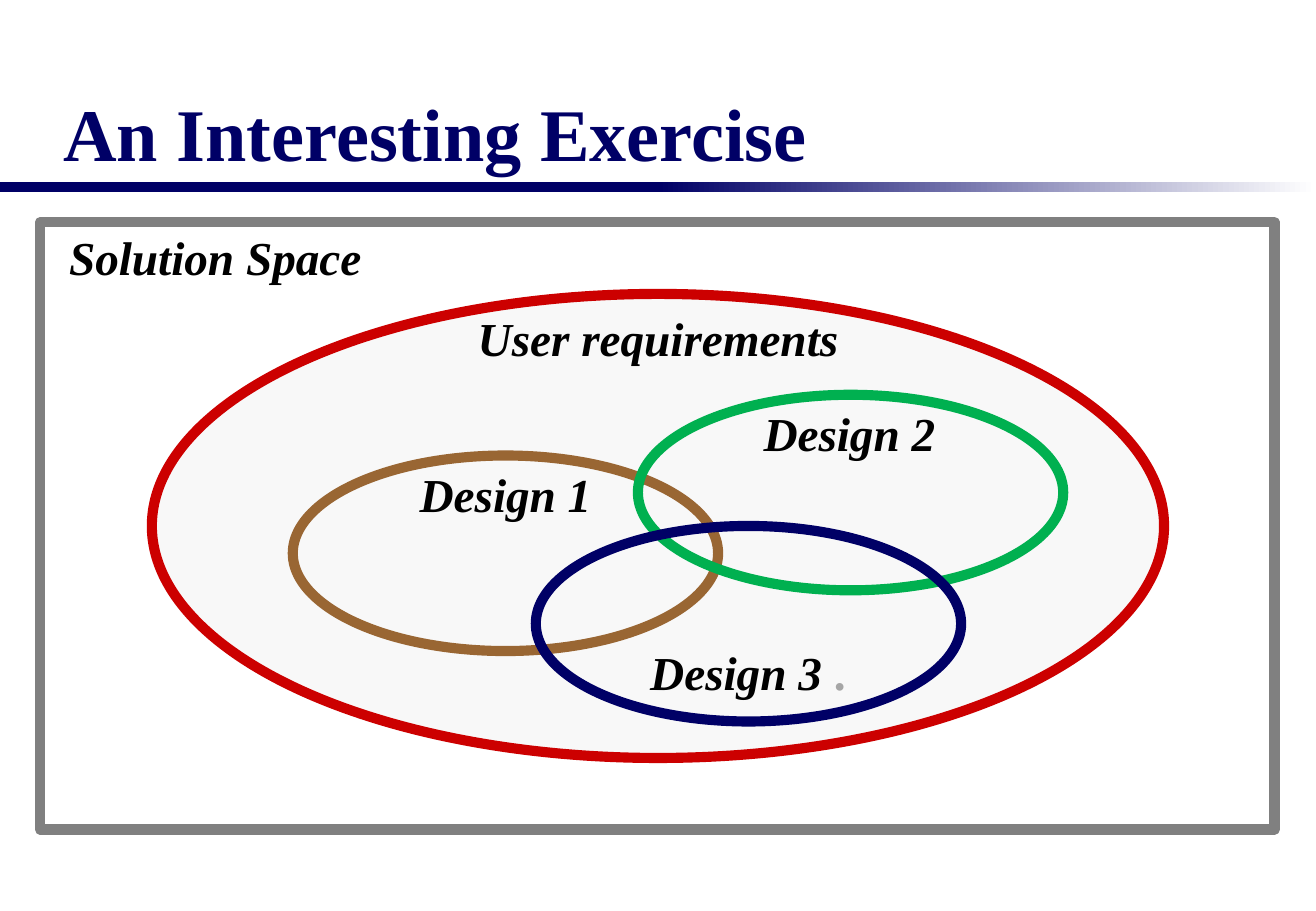
import pptx
import pptx.util
import pptx.dml.color
import pptx.enum.shapes
import pptx.enum.text

Inches = pptx.util.Inches
SHAPES = pptx.enum.shapes.MSO_SHAPE
ALIGN = pptx.enum.text.PP_ALIGN
ANCHOR = pptx.enum.text.MSO_ANCHOR
NAVY = "000066"
LABEL_FORMAT = {"name": "Times New Roman", "size": pptx.util.Pt(28), "bold": True, "italic": True}
TITLE_FORMAT = {"name": "Times New Roman", "size": pptx.util.Pt(44), "bold": True, "italic": False}


def add_run(paragraph, text, font_format, color):
    run = paragraph.add_run()
    run.text = text
    for attribute, value in font_format.items():
        setattr(run.font, attribute, value)
    run.font.color.rgb = pptx.dml.color.RGBColor.from_string(color)


def add_outline(slide, kind, box, fill=None, line=None):
    shape = slide.shapes.add_shape(kind, *[Inches(length) for length in box])
    shape.shadow.inherit = False
    if fill:
        shape.fill.solid()
        shape.fill.fore_color.rgb = pptx.dml.color.RGBColor.from_string(fill)
    else:
        shape.fill.background()
    if line:
        shape.line.color.rgb = pptx.dml.color.RGBColor.from_string(line)
        shape.line.width = pptx.util.Pt(6)
    else:
        shape.line.fill.background()
    return shape


presentation = pptx.Presentation()
presentation.slide_width = Inches(10.83)
presentation.slide_height = Inches(7.5)
slide = presentation.slides.add_slide(presentation.slide_layouts[5])

# Title
title = slide.shapes.title
title.left, title.top, title.width, title.height = [Inches(length) for length in (0.42, 0.29, 10, 1.21)]
title.text_frame.auto_size = pptx.enum.text.MSO_AUTO_SIZE.NONE
title.text_frame.vertical_anchor = ANCHOR.BOTTOM
title_paragraph = title.text_frame.paragraphs[0]
title_paragraph.alignment = ALIGN.LEFT
add_run(title_paragraph, "An Interesting Exercise", TITLE_FORMAT, NAVY)

# Rule under the title: solid half, then fading half
add_outline(slide, SHAPES.RECTANGLE, (0, 1.5, 5.42, 0.08), fill=NAVY)
fading_bar = add_outline(slide, SHAPES.RECTANGLE, (5.41, 1.5, 5.42, 0.08))
fading_bar.fill.gradient()
fading_bar.fill.gradient_angle = 0
for stop, color in zip(fading_bar.fill.gradient_stops, (NAVY, "FFFFFF")):
    stop.color.rgb = pptx.dml.color.RGBColor.from_string(color)

# Solution space frame
frame = add_outline(slide, SHAPES.RECTANGLE, (0.33, 1.83, 10.16, 5), line="808080")
frame.text_frame.vertical_anchor = ANCHOR.TOP
frame_paragraph = frame.text_frame.paragraphs[0]
frame_paragraph.alignment = ALIGN.LEFT
frame_properties = frame_paragraph._p.get_or_add_pPr()
frame_properties.set("marL", str(Inches(0.44)))
frame_properties.set("indent", str(Inches(-0.3)))
add_run(frame_paragraph, "Solution Space", LABEL_FORMAT, "000000")

# Requirements and the designs inside them: label, ellipse, fill, line, label box
DESIGN_SIZE = (3.5, 1.61)
ellipses = [
    ("User requirements", (1.25, 2.42, 8.33, 3.82), "F8F8F8", "CC0000", (3.83, 2.5, 3.17, 0.57)),
    ("Design 1", (2.41, 3.75, *DESIGN_SIZE), None, "996633", (3.35, 3.78, 1.62, 0.57)),
    ("Design 2", (5.25, 3.25, *DESIGN_SIZE), None, "00B050", (6.18, 3.28, 1.62, 0.57)),
    ("Design 3", (4.41, 4.33, *DESIGN_SIZE), None, NAVY, (5.24, 5.25, 1.83, 0.57)),
]
for text, box, fill, line, label_box in ellipses:
    add_outline(slide, SHAPES.OVAL, box, fill, line)
    label = slide.shapes.add_textbox(*[Inches(length) for length in label_box])
    label.text_frame.word_wrap = False
    label.text_frame.auto_size = pptx.enum.text.MSO_AUTO_SIZE.SHAPE_TO_FIT_TEXT
    label_paragraph = label.text_frame.paragraphs[0]
    label_paragraph.alignment = ALIGN.CENTER
    add_run(label_paragraph, text, LABEL_FORMAT, "000000")

# Grey full stop after the last design
add_run(label_paragraph, " .", {**LABEL_FORMAT, "italic": False}, "A6A6A6")

presentation.save("out.pptx")
